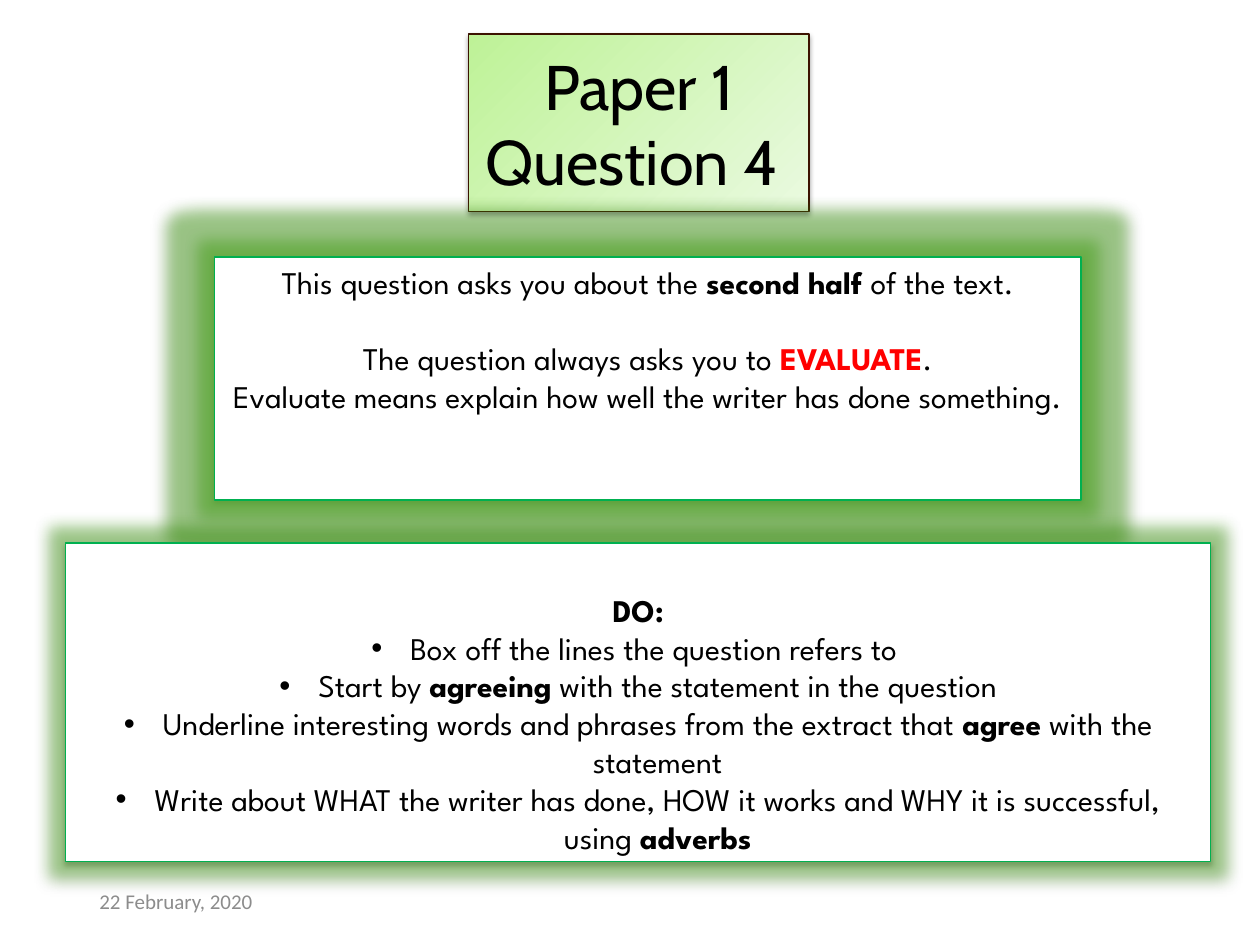
"""Build the Paper 1 Question 4 revision slide."""
from dataclasses import dataclass
from typing import Optional

from lxml.etree import SubElement
from pptx import Presentation
from pptx.dml.color import RGBColor
from pptx.enum.shapes import MSO_SHAPE
from pptx.enum.text import MSO_ANCHOR, MSO_AUTO_SIZE, PP_ALIGN
from pptx.oxml.ns import qn
from pptx.util import Inches, Pt

BLACK = RGBColor(0x00, 0x00, 0x00)
WHITE = RGBColor(0xFF, 0xFF, 0xFF)
RED = RGBColor(0xFF, 0x00, 0x00)
GREY = RGBColor(0x8C, 0x8C, 0x8C)
GREEN = RGBColor(0x00, 0xB0, 0x50)
BROWN = RGBColor(0x3C, 0x13, 0x01)
GLOW = RGBColor(0x3C, 0xA4, 0x08)
TITLE_GRADIENT = (RGBColor(0xBE, 0xF2, 0x97), RGBColor(0xEA, 0xFA, 0xE0))
INDENT = Inches(0.31)


@dataclass(frozen=True)
class Span:
    text: str
    bold: bool = False
    color: Optional[RGBColor] = None


@dataclass(frozen=True)
class Line:
    spans: tuple[Span, ...]
    bullet: bool = False
    space_before: float = 0


QUESTION_LINES = (
    Line((Span("This question asks you about the "), Span("second half ", True), Span("of the text."))),
    Line((Span("The question always asks you to "), Span("EVALUATE", True, RED), Span(".")), space_before=21.6),
    Line((Span("Evaluate means explain how well the writer has done something."),)),
)
ADVICE_LINES = (
    Line((Span("DO:", True),)),
    Line((Span("Box off the lines the question refers to "),), True),
    Line((Span("Start by "), Span("agreeing", True), Span(" with the statement in the question")), True),
    Line((Span("Underline interesting words and phrases from the extract that "),
          Span("agree", True), Span(" with the statement")), True),
    Line((Span("Write about WHAT the writer has done, HOW it works and WHY it is successful, using "),
          Span("adverbs", True)), True),
)
TITLE_LINES = (Line((Span("Paper 1"),)), Line((Span("Question 4 "),)))
DATE_LINES = (Line((Span("22 February, 2020"),)),)


def place(shape, left: float, top: float, width: float, height: float) -> None:
    shape.left, shape.top = Inches(left), Inches(top)
    shape.width, shape.height = Inches(width), Inches(height)


def add_color(parent, color: RGBColor, opacity: int) -> None:
    element = SubElement(parent, qn("a:srgbClr"), val=str(color))
    SubElement(element, qn("a:alpha"), val=str(opacity * 1000))


def add_effects(shape, glow: bool) -> None:
    shape.shadow.inherit = False
    effects = shape._element.spPr.find(qn("a:effectLst"))
    if glow:
        add_color(SubElement(effects, qn("a:glow"), rad=str(Pt(18))), GLOW, 40)
    shadow = SubElement(effects, qn("a:outerShdw"), blurRad=str(Pt(3.1)), dist=str(Pt(1.6)),
                        dir="5400000", rotWithShape="0")
    add_color(shadow, BLACK, 38)


def outline(shape, color: RGBColor) -> None:
    shape.line.color.rgb = color
    shape.line.width = Pt(0.75)


def style_panel(shape) -> None:
    shape.fill.solid()
    shape.fill.fore_color.rgb = WHITE
    outline(shape, GREEN)
    add_effects(shape, glow=True)


def set_bullet(paragraph, bullet: bool) -> None:
    properties = paragraph._p.get_or_add_pPr()
    properties.set("marL", str(INDENT if bullet else 0))
    properties.set("indent", str(-INDENT if bullet else 0))
    if bullet:
        SubElement(properties, qn("a:buFont"), typeface="Arial")
        SubElement(properties, qn("a:buChar"), char="•")
    else:
        SubElement(properties, qn("a:buNone"))


def write_lines(shape, lines: tuple[Line, ...], font: str, size: float, anchor: MSO_ANCHOR,
                color: RGBColor = BLACK, alignment: PP_ALIGN = PP_ALIGN.CENTER) -> None:
    frame = shape.text_frame
    frame.word_wrap = True
    frame.auto_size = MSO_AUTO_SIZE.NONE
    frame.vertical_anchor = anchor
    for index, line in enumerate(lines):
        paragraph = frame.add_paragraph() if index else frame.paragraphs[0]
        set_bullet(paragraph, line.bullet)
        paragraph.alignment = alignment
        paragraph.space_before = Pt(line.space_before)
        paragraph.font.name = font
        paragraph.font.size = Pt(size)
        paragraph.font.color.rgb = color
        for span in line.spans:
            run = paragraph.add_run()
            run.text = span.text
            if span.bold:
                run.font.bold = True
            if span.color is not None:
                run.font.color.rgb = span.color


def main() -> None:
    presentation = Presentation()
    presentation.slide_width, presentation.slide_height = Inches(10), Inches(7.5)
    slide = presentation.slides.add_slide(presentation.slide_layouts[1])

    title = slide.shapes.title
    place(title, 3.72, 0.27, 2.7, 1.41)
    title.fill.gradient()
    title.fill.gradient_angle = 315
    for stop, color in zip(title.fill.gradient_stops, TITLE_GRADIENT):
        stop.color.rgb = color
    outline(title, BROWN)
    add_effects(title, glow=False)
    write_lines(title, TITLE_LINES, "Cabin", 36, MSO_ANCHOR.MIDDLE)

    question = slide.shapes.add_shape(MSO_SHAPE.RECTANGLE, Inches(1.7), Inches(2.04), Inches(6.88), Inches(1.93))
    style_panel(question)
    write_lines(question, QUESTION_LINES, "League Spartan", 18, MSO_ANCHOR.TOP)

    advice = slide.placeholders[1]
    place(advice, 0.52, 4.31, 9.09, 2.53)
    style_panel(advice)
    write_lines(advice, ADVICE_LINES, "League Spartan", 18, MSO_ANCHOR.BOTTOM)
    slide.shapes._spTree.append(advice._element)

    date = slide.shapes.add_textbox(Inches(0.69), Inches(6.95), Inches(2.25), Inches(0.4))
    write_lines(date, DATE_LINES, "Calibri", 12, MSO_ANCHOR.MIDDLE, GREY, PP_ALIGN.LEFT)

    presentation.save("out.pptx")


if __name__ == "__main__":
    main()
